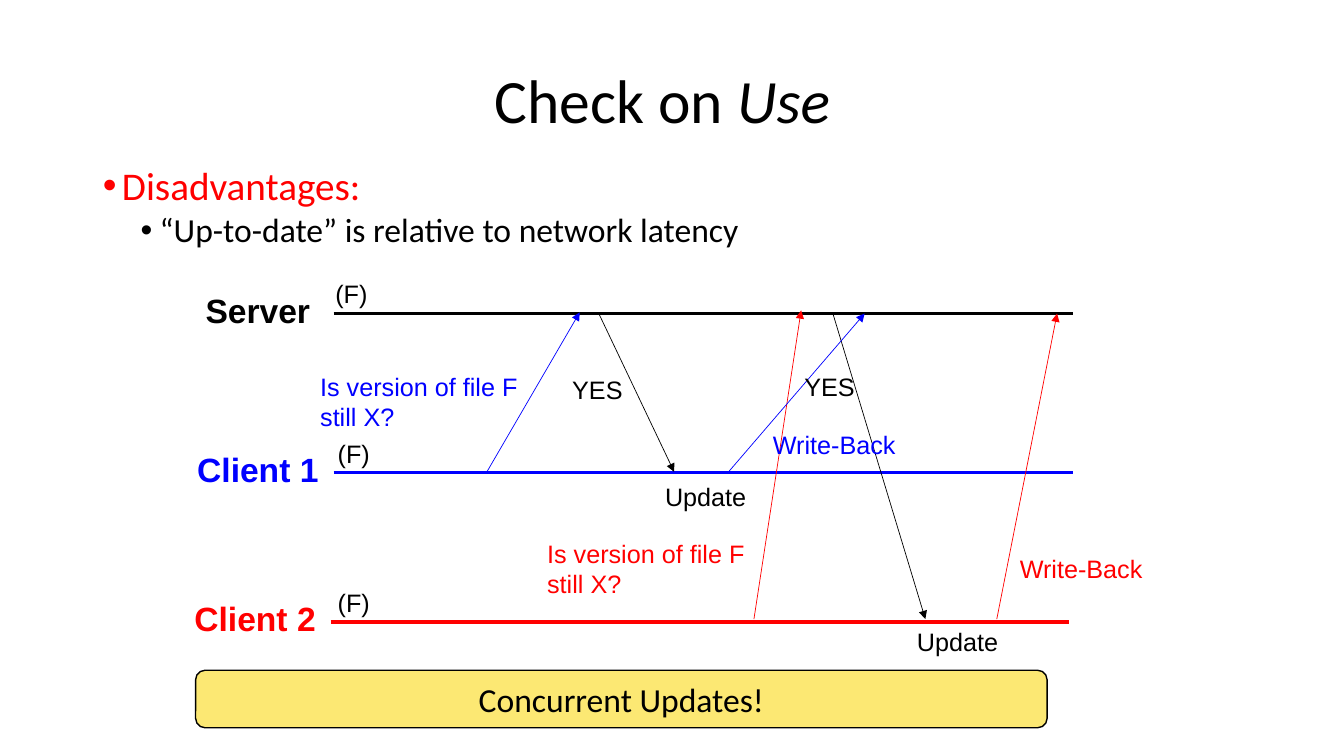
from lxml import etree
from pptx import Presentation
from pptx.dml.color import RGBColor
from pptx.enum.shapes import MSO_CONNECTOR, MSO_SHAPE
from pptx.enum.text import MSO_ANCHOR, MSO_AUTO_SIZE, PP_ALIGN
from pptx.oxml.ns import qn
from pptx.util import Cm, Pt

STRAIGHT = MSO_CONNECTOR.STRAIGHT
ROUNDED = MSO_SHAPE.ROUNDED_RECTANGLE
MIDDLE, TOP = MSO_ANCHOR.MIDDLE, MSO_ANCHOR.TOP
CENTER = PP_ALIGN.CENTER
NO_AUTOFIT = MSO_AUTO_SIZE.NONE

BLACK = RGBColor(0x00, 0x00, 0x00)
BLUE = RGBColor(0x00, 0x00, 0xFF)
RED = RGBColor(0xFF, 0x00, 0x00)
YELLOW = RGBColor(0xFC, 0xE8, 0x73)


def add_run(paragraph, text, font_name, size, color, bold=False, italic=False):
    run = paragraph.add_run()
    run.text = text
    run.font.name = font_name
    run.font.size = Pt(size)
    run.font.color.rgb = color
    run.font.bold = bold
    run.font.italic = italic


def add_line(start, end, color, width, arrow=False):
    """Draw a straight line between two points given in centimetres."""
    line = slide.shapes.add_connector(
        STRAIGHT, *(Cm(value) for value in (*start, *end)))
    line.line.color.rgb = color
    line.line.width = Pt(width)
    if arrow:
        etree.SubElement(line.line._get_or_add_ln(), qn("a:tailEnd"), type="triangle")
    etree.SubElement(line._element.spPr, qn("a:effectLst"))


presentation = Presentation()
presentation.slide_width = Cm(33.87)
presentation.slide_height = Cm(19.05)
slide = presentation.slides.add_slide(presentation.slide_layouts[1])

# Title and bullet list
title = slide.shapes.title
title.left, title.top, title.width, title.height = Cm(2.34), Cm(0.76), Cm(28.7), Cm(3.68)
title.text_frame.auto_size = NO_AUTOFIT
title.text_frame.vertical_anchor = MIDDLE
heading = title.text_frame.paragraphs[0]
heading.alignment = CENTER
heading.line_spacing = 0.9
add_run(heading, "Check on ", "Calibri", 44, BLACK)
add_run(heading, "Use", "Calibri", 44, BLACK, italic=True)

body = slide.placeholders[1]
body.left, body.top, body.width, body.height = Cm(2.34), Cm(4.06), Cm(28.7), Cm(13.97)
body.text_frame.auto_size = NO_AUTOFIT
body.text_frame.vertical_anchor = TOP
bullets = [
    ("Disadvantages:", 28, RED, 0.48, 0),
    ("“Up-to-date” is relative to network latency", 24, BLACK, 1.43, 3.8),
]
for level, (text, size, color, margin, space_before) in enumerate(bullets):
    paragraph = body.text_frame.paragraphs[0] if level == 0 else body.text_frame.add_paragraph()
    paragraph.level = level
    paragraph.line_spacing = 0.9
    paragraph.space_before = Pt(space_before)
    properties = paragraph._p.get_or_add_pPr()
    properties.set("marL", str(Cm(margin)))
    properties.set("indent", str(-Cm(0.48)))
    etree.SubElement(properties, qn("a:buFont"), typeface="Arial")
    etree.SubElement(properties, qn("a:buChar"), char="•")
    add_run(paragraph, text, "Calibri", size, color)

# Timelines: name, colour, line start, line height, name left, name width, file left
lanes = [
    ("Server", BLACK, 8.41, 7.9, 4.93, 3.18, 8.2),
    ("Client 1", BLUE, 8.41, 11.91, 4.72, 3.61, 8.26),
    ("Client 2", RED, 8.33, 15.67, 4.65, 3.61, 8.26),
]
# Labels: lines, colour, left, top, width, height, size, bold
labels = [
    (["Is version of file F", "still X?"], BLUE, 7.82, 9.22, 5.72, 1.8, 18, False),
    (["Is version of file F", "still X?"], RED, 13.54, 13.44, 5.72, 1.8, 18, False),
    (["YES"], BLACK, 14.17, 9.3, 1.8, 1.02, 18, False),
    (["YES"], BLACK, 20.02, 9.22, 1.8, 1.02, 18, False),
    (["Update"], BLACK, 16.51, 12.01, 2.59, 1.02, 18, False),
    (["Update"], BLACK, 22.86, 15.67, 2.59, 1.02, 18, False),
    (["Write-Back"], BLUE, 19.23, 10.69, 3.63, 1.02, 18, False),
    (["Write-Back"], RED, 25.45, 13.82, 3.63, 1.02, 18, False),
]
for name, color, line_left, line_y, name_left, name_width, file_left in lanes:
    add_line((line_left, line_y), (line_left + 18.62, line_y), color, 2.5)
    labels.append(([name], color, name_left, line_y - 0.72, name_width, 1.27, 24, True))
    labels.append((["(F)"], BLACK, file_left, line_y - 1, 1.32, 1.02, 18, False))

# Messages between the timelines
messages = [
    ((12.27, 11.89), (14.61, 7.87), BLUE),
    ((15.09, 7.9), (16.99, 11.89), BLACK),
    ((19, 15.6), (20.19, 7.82), RED),
    ((20.98, 7.87), (23.32, 15.6), BLACK),
    ((18.36, 11.89), (21.79, 7.9), BLUE),
    ((25.12, 15.6), (26.64, 7.9), RED),
]
for start, end, color in messages:
    add_line(start, end, color, 0.5, arrow=True)

for lines, color, left, top, width, height, size, bold in labels:
    label = slide.shapes.add_textbox(Cm(left), Cm(top), Cm(width), Cm(height))
    label.text_frame.word_wrap = False
    for index, text in enumerate(lines):
        paragraph = label.text_frame.paragraphs[0] if index == 0 else label.text_frame.add_paragraph()
        add_run(paragraph, text, "Arial", size, color, bold)

# Conclusion
banner = slide.shapes.add_shape(ROUNDED, Cm(4.93), Cm(16.89), Cm(21.46), Cm(1.45))
banner.shadow.inherit = False
banner.fill.solid()
banner.fill.fore_color.rgb = YELLOW
banner.line.color.rgb = BLACK
banner.line.width = Pt(1)
banner.text_frame.vertical_anchor = MIDDLE
conclusion = banner.text_frame.paragraphs[0]
conclusion.alignment = CENTER
add_run(conclusion, "Concurrent Updates!", "Calibri", 24, BLACK)

presentation.save("out.pptx")
